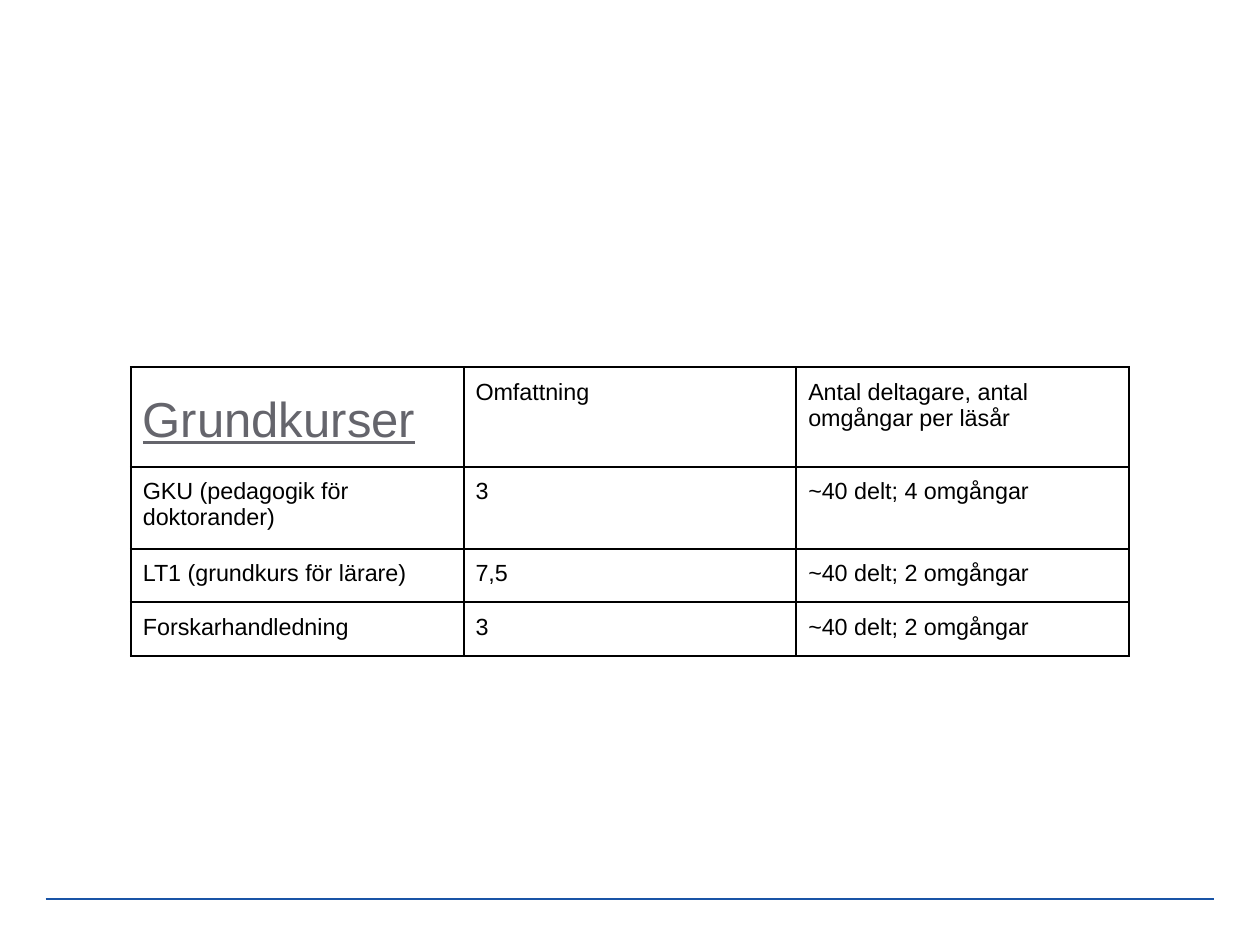
from pptx import Presentation
from pptx.dml.color import RGBColor
from pptx.enum.shapes import MSO_CONNECTOR
from pptx.oxml.ns import qn
from pptx.util import Cm, Pt
from lxml.etree import SubElement

BLUE = RGBColor(0x19, 0x54, 0xA6)
GREY = RGBColor(0x65, 0x65, 0x6C)
BLACK = RGBColor(0, 0, 0)

COURSES = [
    ("Grundkurser", "Omfattning", "Antal deltagare, antal omgångar per läsår"),
    ("GKU (pedagogik för doktorander)", "3", "~40 delt; 4 omgångar"),
    ("LT1 (grundkurs för lärare)", "7,5", "~40 delt; 2 omgångar"),
    ("Forskarhandledning", "3", "~40 delt; 2 omgångar"),
]
ROW_HEIGHTS = [1.5, 1.24, 0.81, 0.81]
COL_WIDTH = 5.03
INSET = Cm(0.18)


def add_borders(cell):
    tc_pr = cell._tc.get_or_add_tcPr()
    for i, side in enumerate(("a:lnL", "a:lnR", "a:lnT", "a:lnB")):
        ln = SubElement(tc_pr, qn(side), w=str(Pt(1)))
        fill = SubElement(ln, qn("a:solidFill"))
        SubElement(fill, qn("a:srgbClr"), val=str(BLACK))
        tc_pr.insert(i, ln)  # borders come before the cell fill


prs = Presentation()
prs.slide_width, prs.slide_height = Cm(19.05), Cm(14.28)
s = prs.slides.add_slide(prs.slide_layouts[6])

footer_line = s.shapes.add_connector(
    MSO_CONNECTOR.STRAIGHT, Cm(0.69), Cm(13.59), Cm(18.36), Cm(13.59))
footer_line.line.color.rgb = BLUE
footer_line.line.width = Pt(1)
SubElement(footer_line._element.spPr, qn("a:effectLst"))

table = s.shapes.add_table(
    len(COURSES), 3, Cm(1.98), Cm(5.55),
    Cm(3 * COL_WIDTH), Cm(sum(ROW_HEIGHTS))).table
table.first_row = table.horz_banding = False
for col in table.columns:
    col.width = Cm(COL_WIDTH)

for i, (course, height) in enumerate(zip(COURSES, ROW_HEIGHTS)):
    table.rows[i].height = Cm(height)
    for j, text in enumerate(course):
        heading = i == j == 0
        cell = table.cell(i, j)
        cell.margin_left = cell.margin_right = INSET
        cell.margin_top = cell.margin_bottom = INSET
        cell.fill.background()
        add_borders(cell)
        p = cell.text_frame.paragraphs[0]
        if heading:
            p.line_spacing = 1.25
        r = p.add_run()
        r.text = text
        r.font.name = "Arial"
        r.font.size = Pt(21 if heading else 10)
        r.font.underline = heading
        r.font.color.rgb = GREY if heading else BLACK

prs.save("out.pptx")
